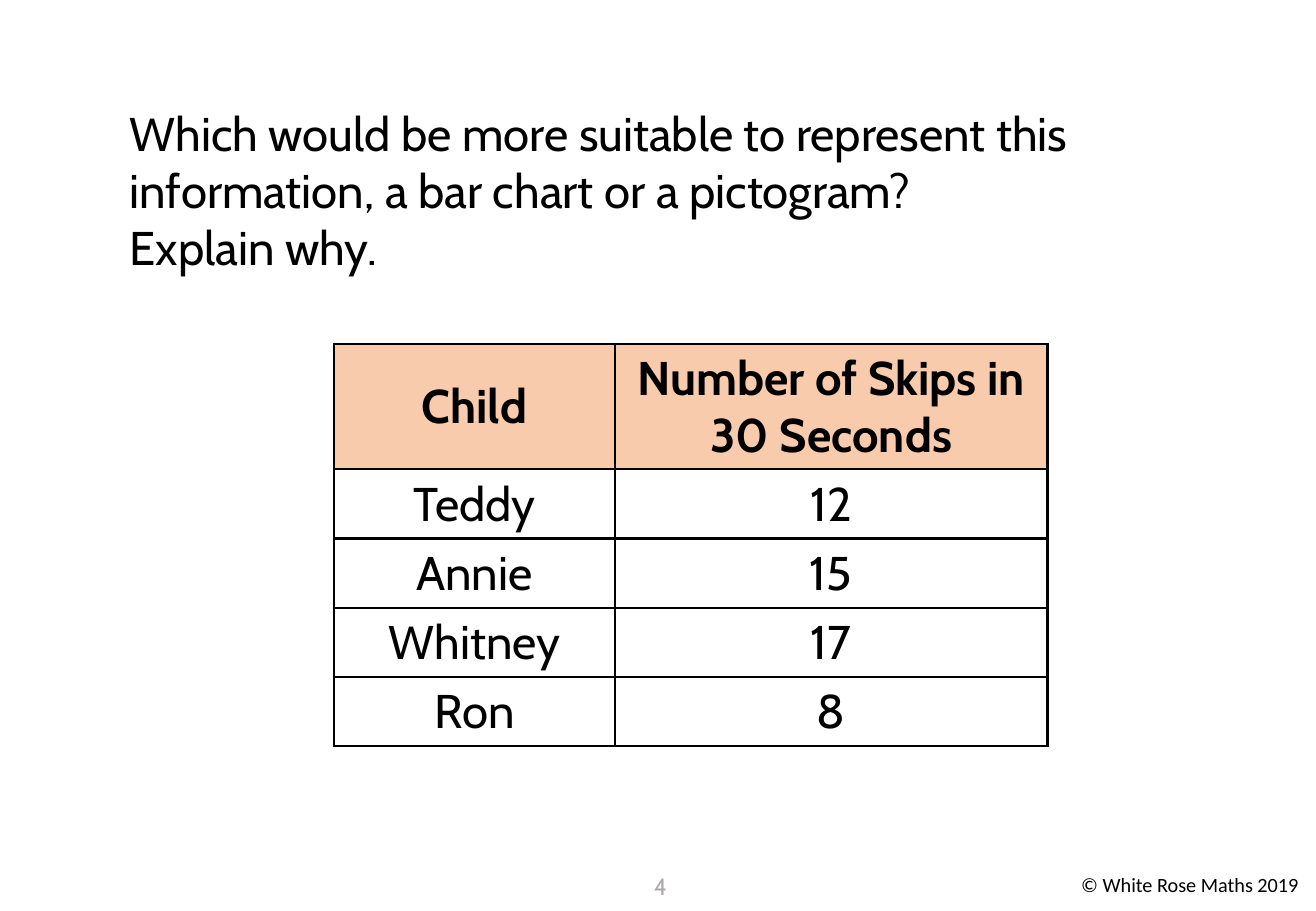
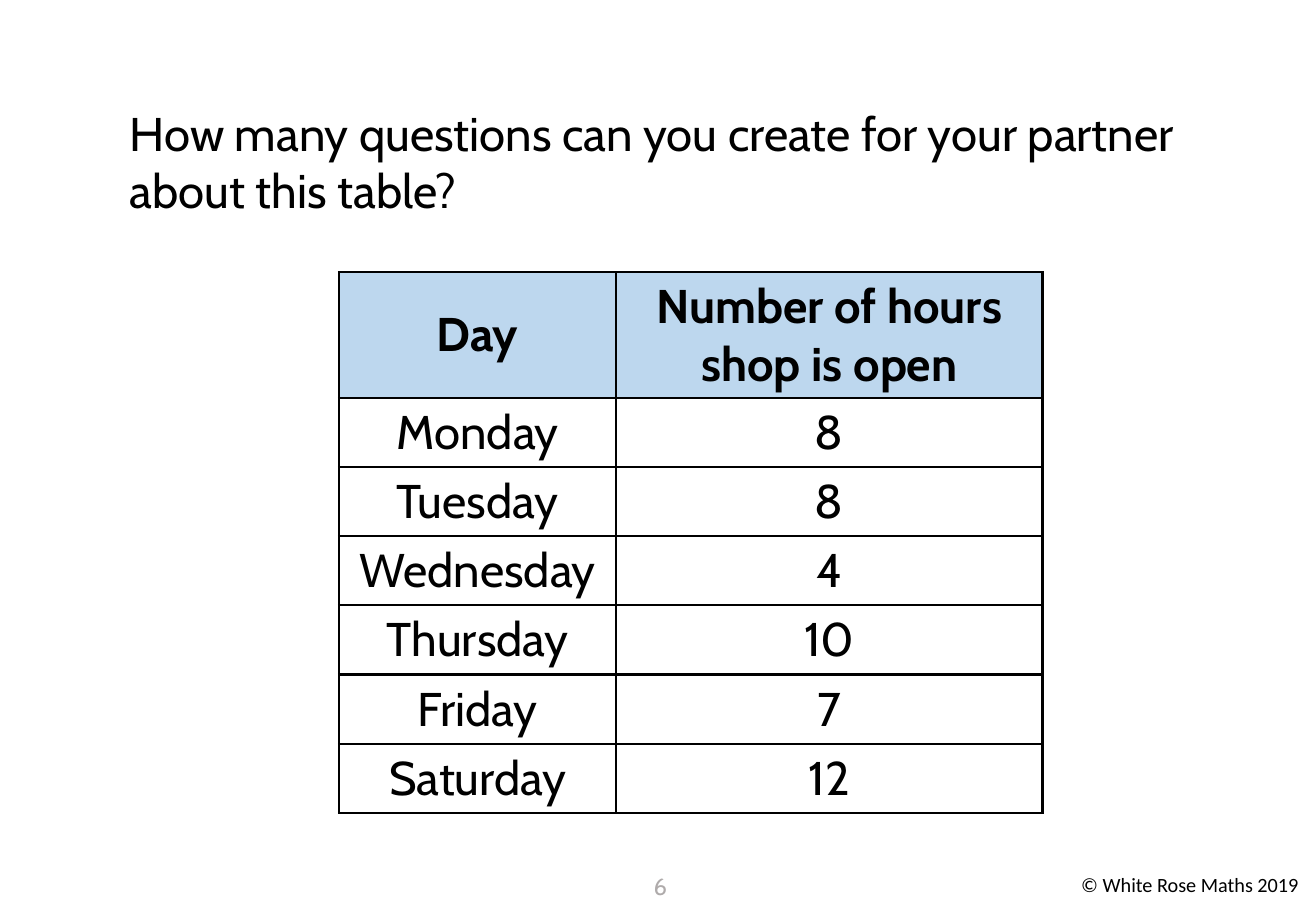
import pptx
import pptx.util
import pptx.dml.color
import pptx.enum.text
import pptx.oxml
import pptx.oxml.ns

Inches = pptx.util.Inches
ALIGN = pptx.enum.text.PP_ALIGN
MIDDLE = pptx.enum.text.MSO_ANCHOR.MIDDLE

COLOURS = {
    "ink": "000000",
    "number": "AFABAB",
    "paper": "FFFFFF",
    "peach": "F8CBAD",
    "sky": "BDD7EE",
}
WIDTH, HEIGHT = 10.83, 7.5
QUESTION_BOX = (0.97, 0.81, 8.81, 1.51)
FOOTER_TOP = 7.13
HEADER_ROW, BODY_ROW = 1.03, 0.57
COPYRIGHT = "© White Rose Maths 2019"

PAGES = [
    {
        "number": "4",
        "question": [
            "Which would be more suitable to represent this information, a bar chart or a pictogram?",
            "Explain why.",
        ],
        "header": "peach",
        "corner": (2.75, 2.83),
        "columns": (2.31, 3.56),
        "rows": [
            ("Child", "Number of Skips in 30 Seconds"),
            ("Teddy", "12"),
            ("Annie", "15"),
            ("Whitney", "17"),
            ("Ron", "8"),
        ],
    },
    {
        "number": "6",
        "question": ["How many questions can you create for your partner about this table?"],
        "header": "sky",
        "corner": (2.79, 2.24),
        "columns": (2.28, 3.51),
        "rows": [
            ("Day", "Number of hours shop is open"),
            ("Monday", "8"),
            ("Tuesday", "8"),
            ("Wednesday", "4"),
            ("Thursday", "10"),
            ("Friday", "7"),
            ("Saturday", "12"),
        ],
    },
]


def rgb(name):
    return pptx.dml.color.RGBColor.from_string(COLOURS[name])


def write(frame, lines, size=28, font="Cabin", colour="ink", bold=False, align=ALIGN.LEFT):
    frame.word_wrap = True
    for index, line in enumerate(lines):
        paragraph = frame.add_paragraph() if index else frame.paragraphs[0]
        paragraph.alignment = align
        run = paragraph.add_run()
        run.text = line
        run.font.size = pptx.util.Pt(size)
        run.font.name = font
        run.font.bold = bold
        run.font.color.rgb = rgb(colour)


def add_text(slide, box, lines, **style):
    write(slide.shapes.add_textbox(*map(Inches, box)).text_frame, lines, **style)


def outline(cell, points=1.5):
    properties = cell._tc.get_or_add_tcPr()
    for position, side in enumerate(("lnL", "lnR", "lnT", "lnB")):
        border = pptx.oxml.parse_xml(
            f'<a:{side} {pptx.oxml.ns.nsdecls("a")} w="{pptx.util.Pt(points)}">'
            f'<a:solidFill><a:srgbClr val="{COLOURS["ink"]}"/></a:solidFill></a:{side}>'
        )
        properties.insert(position, border)


def add_results(slide, page):
    rows, columns = page["rows"], page["columns"]
    heights = [HEADER_ROW] + [BODY_ROW] * (len(rows) - 1)
    box = (*page["corner"], sum(columns), sum(heights))
    results = slide.shapes.add_table(len(rows), len(columns), *map(Inches, box)).table
    results.horz_banding = False
    for column, width in zip(results.columns, columns):
        column.width = Inches(width)
    for r, (labels, height) in enumerate(zip(rows, heights)):
        results.rows[r].height = Inches(height)
        for c, label in enumerate(labels):
            cell = results.cell(r, c)
            cell.vertical_anchor = MIDDLE
            cell.fill.solid()
            cell.fill.fore_color.rgb = rgb("paper" if r else page["header"])
            outline(cell)
            write(cell.text_frame, [label], bold=r == 0, align=ALIGN.CENTER)


def main():
    deck = pptx.Presentation()
    deck.slide_width, deck.slide_height = Inches(WIDTH), Inches(HEIGHT)
    for page in PAGES:
        slide = deck.slides.add_slide(deck.slide_layouts[6])
        add_text(slide, (8.8, FOOTER_TOP, WIDTH - 8.8, 0.3), [COPYRIGHT], size=12, font="Calibri")
        add_text(slide, (5.18, FOOTER_TOP, 0.51, 0.37), [page["number"]],
                 size=14, colour="number", align=ALIGN.CENTER)
        add_text(slide, QUESTION_BOX, page["question"])
        add_results(slide, page)
    deck.save("out.pptx")


if __name__ == "__main__":
    main()
